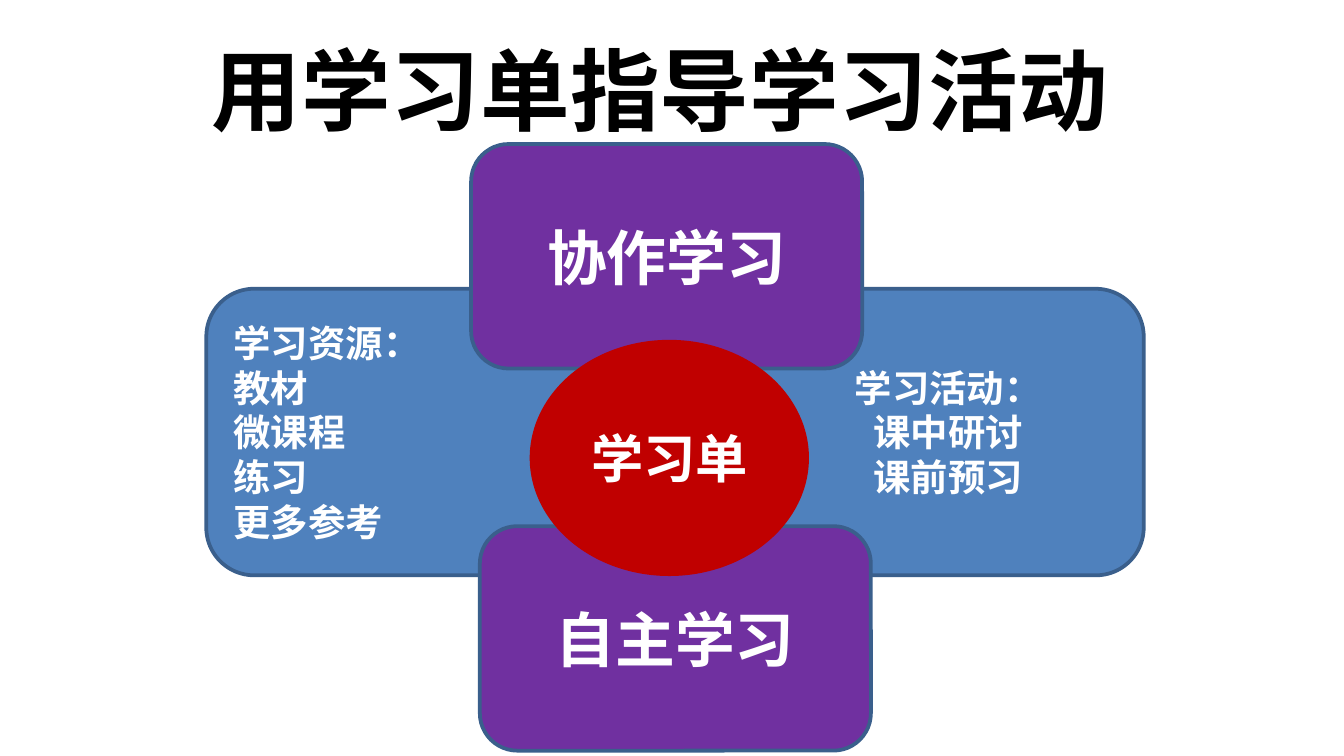
from pptx import Presentation
from pptx.dml.color import RGBColor
from pptx.enum.lang import MSO_LANGUAGE_ID
from pptx.enum.shapes import MSO_SHAPE
from pptx.enum.text import MSO_ANCHOR, MSO_AUTO_SIZE, PP_ALIGN
from pptx.util import Inches, Pt

ROUNDED = MSO_SHAPE.ROUNDED_RECTANGLE
OVAL = MSO_SHAPE.OVAL
MIDDLE = MSO_ANCHOR.MIDDLE
GROW = MSO_AUTO_SIZE.SHAPE_TO_FIT_TEXT
LEFT = PP_ALIGN.LEFT
CENTER = PP_ALIGN.CENTER
CHINESE = MSO_LANGUAGE_ID.SIMPLIFIED_CHINESE

WIDTH = Inches(10)
HEIGHT = WIDTH * 9 // 16
COLUMN, ROW = WIDTH / 100, HEIGHT / 100
BLUE, OUTLINE, PURPLE, RED = "4F81BD", "3A5F8C", "7030A0", "C00000"
BLACK, WHITE = "000000", "FFFFFF"

PANEL_SIZE = (29.1, 37.9)
CARD_SIZE = (29.1, 29.7)
HUB_SIZE = (20.5, 30.75)
RESOURCES = ["学习资源：", "教材", "微课程", "练习", "更多参考"]
ACTIVITIES = ["学习活动：", "课中研讨", "课前预习"]


def color(value):
    """Turn a hex string into a colour."""
    return RGBColor.from_string(value)


def place(position, size):
    """Turn grid columns and rows into left, top, width and height."""
    return [round(value * unit) for value, unit in zip(position + size, (COLUMN, ROW) * 2)]


def write(frame, lines, size, font, ink, alignment):
    """Fill a text frame with bold lines, one paragraph each."""
    frame.word_wrap = True
    formats = {"size": Pt(size), "name": font, "bold": True, "language_id": CHINESE}
    for index, line in enumerate(lines):
        paragraph = frame.add_paragraph() if index else frame.paragraphs[0]
        paragraph.alignment = alignment
        run = paragraph.add_run()
        run.text = line
        run.font.color.rgb = color(ink)
        for name, value in formats.items():
            setattr(run.font, name, value)


def add_title(slide, text):
    """Add the centred heading."""
    box = slide.shapes.add_textbox(*place((14.6, 3.7), (70.5, 16.2)))
    write(box.text_frame, [text], 48, "Noto Sans CJK SC", BLACK, CENTER)
    box.text_frame.auto_size = GROW


def add_block(slide, kind, position, size, fill, line, lines, points,
              font="Calibri", alignment=CENTER):
    """Add a filled, outlined shape with white text in its middle."""
    shape = slide.shapes.add_shape(kind, *place(position, size))
    shape.shadow.inherit = False
    shape.fill.solid()
    shape.fill.fore_color.rgb = color(fill)
    shape.line.color.rgb = color(line)
    shape.line.width = Pt(2)
    shape.text_frame.vertical_anchor = MIDDLE
    write(shape.text_frame, lines, points, font, WHITE, alignment)


def main():
    """Build the slide and save it."""
    presentation = Presentation()
    presentation.slide_width, presentation.slide_height = WIDTH, HEIGHT
    slide = presentation.slides.add_slide(presentation.slide_layouts[6])
    add_title(slide, "用学习单指导学习活动 ")
    for left, lines, font, alignment in [(15.35, RESOURCES, "Arial", LEFT),
                                         (56, ACTIVITIES, "Calibri", CENTER)]:
        add_block(slide, ROUNDED, (left, 38.2), PANEL_SIZE, BLUE, OUTLINE,
                  lines, 20, font, alignment)
    for position, label in [((35.7, 69.6), "自主学习"), ((35.05, 19.05), "协作学习")]:
        add_block(slide, ROUNDED, position, CARD_SIZE, PURPLE, OUTLINE, [label], 32)
    add_block(slide, OVAL, (39.55, 45.2), HUB_SIZE, RED, RED, ["学习单"], 28)
    presentation.save("out.pptx")


if __name__ == "__main__":
    main()
